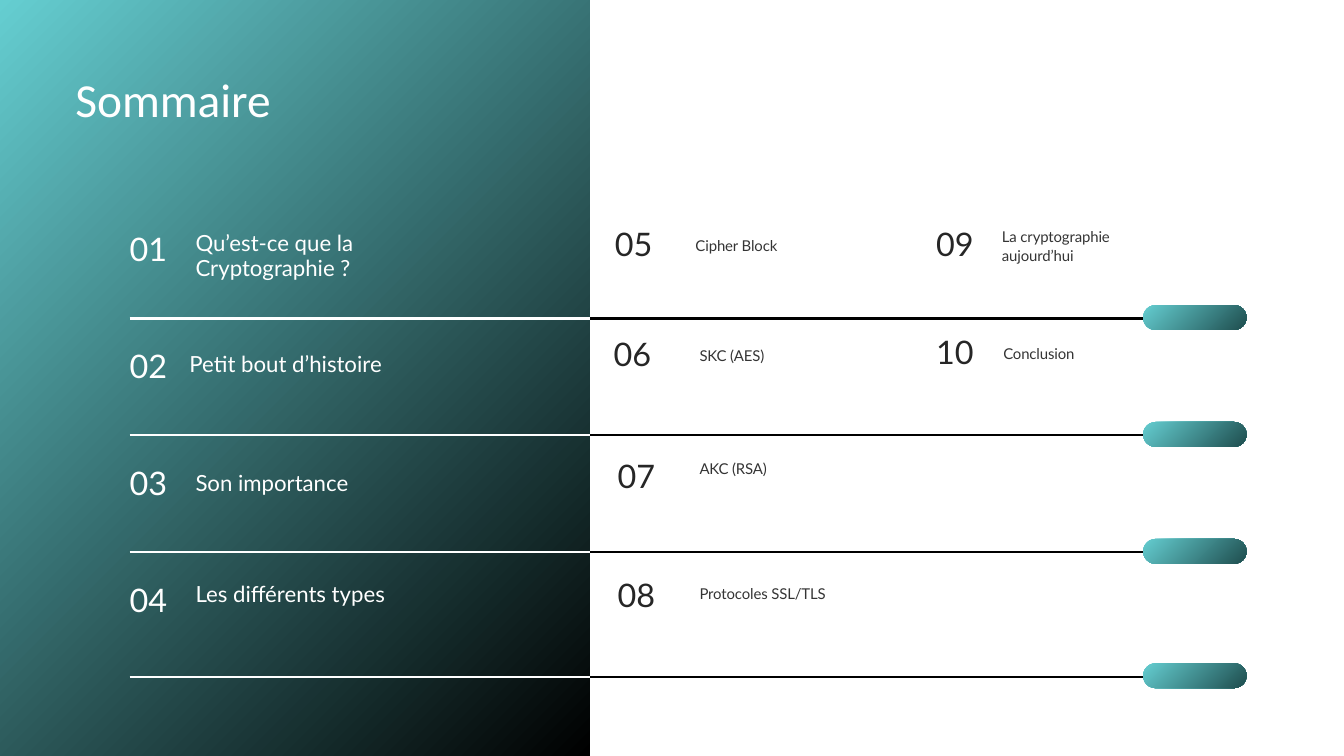
from pptx import Presentation, util as u
from pptx.dml import color
from pptx.enum import shapes, text
from pptx.oxml import xmlchemy

COLUMNS, ROWS = 20, 11.25
TEAL, DARK_TEAL, BLACK, WHITE = "65CED1", "1F4E4F", "000000", "FFFFFF"
PANEL_WIDTH = 8.78
RULE_ROWS = [4.74, 6.48, 8.22, 10.07]

FORMATS = {
    "title": dict(name="Calibri", size=50.8, color=WHITE, leading=57.4),
    "light number": dict(name="Lato", size=34.7, color=WHITE, leading=39.2),
    "dark number": dict(name="Lato", size=34.7, color="262626", leading=39.2),
    "light topic": dict(name="Lato", size=23.8, color=WHITE, leading=26.9),
    "dark topic": dict(name="Lato", size=16, color="343434", leading=20.8, tracking=-0.1),
}

ENTRIES = [
    ("light", "01", (1.93, 3.44), "Qu’est-ce que la Cryptographie ?", (2.91, 3.44, 3.14, 0.76)),
    ("light", "02", (1.93, 5.18), "Petit bout d’histoire", (2.82, 5.23, 3.14, 0.38)),
    ("light", "03", (1.93, 6.92), "Son importance", (2.91, 7.01, 3.14, 0.38)),
    ("light", "04", (1.93, 8.66), "Les différents types", (2.91, 8.66, 3.14, 0.38)),
    ("dark", "05", (9.15, 3.37), "Cipher Block", (10.35, 3.5, 1.3, 0.29)),
    ("dark", "06", (9.13, 5.01), "SKC (AES)", (10.41, 5.13, 1.1, 0.29)),
    ("dark", "07", (9.19, 6.82), "AKC (RSA)", (10.41, 6.82, 1.3, 0.29)),
    ("dark", "08", (9.19, 8.59), "Protocoles SSL/TLS", (10.41, 8.67, 2.02, 0.29)),
    ("dark", "09", (13.93, 3.37), "La cryptographie aujourd’hui", (14.91, 3.36, 2.02, 0.58)),
    ("dark", "10", (13.93, 4.97), "Conclusion", (14.93, 5.1, 1.97, 0.29)),
]


def rgb(value):
    return color.RGBColor.from_string(value)


class Summary:
    def __init__(self):
        self.deck = Presentation()
        self.deck.slide_width, self.deck.slide_height = u.Inches(20), u.Inches(11.25)
        self.page = self.deck.slides.add_slide(self.deck.slide_layouts[5])

    def across(self, columns):
        return round(self.deck.slide_width * columns / COLUMNS)

    def down(self, rows):
        return round(self.deck.slide_height * rows / ROWS)

    def place(self, left, top, width, height):
        return self.across(left), self.down(top), self.across(width), self.down(height)

    def fill_text(self, box, words, style):
        values = FORMATS[style]
        frame = box.text_frame
        settings = dict(margin_left=0, margin_top=0, margin_right=0, margin_bottom=0,
                        word_wrap=True, vertical_anchor=text.MSO_ANCHOR.TOP,
                        auto_size=text.MSO_AUTO_SIZE.SHAPE_TO_FIT_TEXT)
        for key, value in settings.items():
            setattr(frame, key, value)
        para = frame.paragraphs[0]
        para.alignment = text.PP_ALIGN.LEFT
        para.line_spacing = u.Pt(values["leading"])
        span = para.add_run()
        span.text = words
        for key, value in dict(name=values["name"], size=u.Pt(values["size"])).items():
            setattr(span.font, key, value)
        span.font.color.rgb = rgb(values["color"])
        if "tracking" in values:
            span._r.get_or_add_rPr().set("spc", str(round(values["tracking"] * 100)))

    def title(self, words, area):
        box = self.page.shapes.title
        box.left, box.top, box.width, box.height = self.place(*area)
        self.fill_text(box, words, "title")
        box.element.getparent().append(box.element)

    def label(self, words, area, style):
        self.fill_text(self.page.shapes.add_textbox(*self.place(*area)), words, style)

    def gradient(self, kind, area, start, end):
        shape = self.page.shapes.add_shape(kind, *self.place(*area))
        shape.shadow.inherit = False
        shape.line.fill.background()
        shape.fill.gradient()
        shape.fill.gradient_angle = 315
        for stop, shade in zip(shape.fill.gradient_stops, (start, end)):
            stop.color.rgb = rgb(shade)
        return shape

    def rule(self, start, end, row, shade):
        line = self.page.shapes.add_connector(
            shapes.MSO_CONNECTOR.STRAIGHT,
            self.across(start), self.down(row), self.across(end), self.down(row))
        line.line.width = u.Pt(2.25)
        line.line.color.rgb = rgb(shade)
        line.element.spPr.append(xmlchemy.OxmlElement("a:effectLst"))


def main():
    summary = Summary()
    summary.gradient(shapes.MSO_SHAPE.RECTANGLE, (0, 0, PANEL_WIDTH, ROWS), TEAL, BLACK)
    for row in RULE_ROWS:
        summary.rule(1.93, PANEL_WIDTH, row, WHITE)
        summary.rule(PANEL_WIDTH, 17.05, row, BLACK)
        pill = summary.gradient(shapes.MSO_SHAPE.ROUNDED_RECTANGLE,
                                (17.01, row - 0.2, 1.54, 0.37), TEAL, DARK_TEAL)
        pill.adjustments[0] = 0.5
    for tone, number, corner, topic, area in ENTRIES:
        summary.label(number, (*corner, 0.98, 0.55), f"{tone} number")
        summary.label(topic, area, f"{tone} topic")
    summary.title("Sommaire", (1.12, 1.09, 8.88, 0.8))
    summary.deck.save("out.pptx")


if __name__ == "__main__":
    main()
